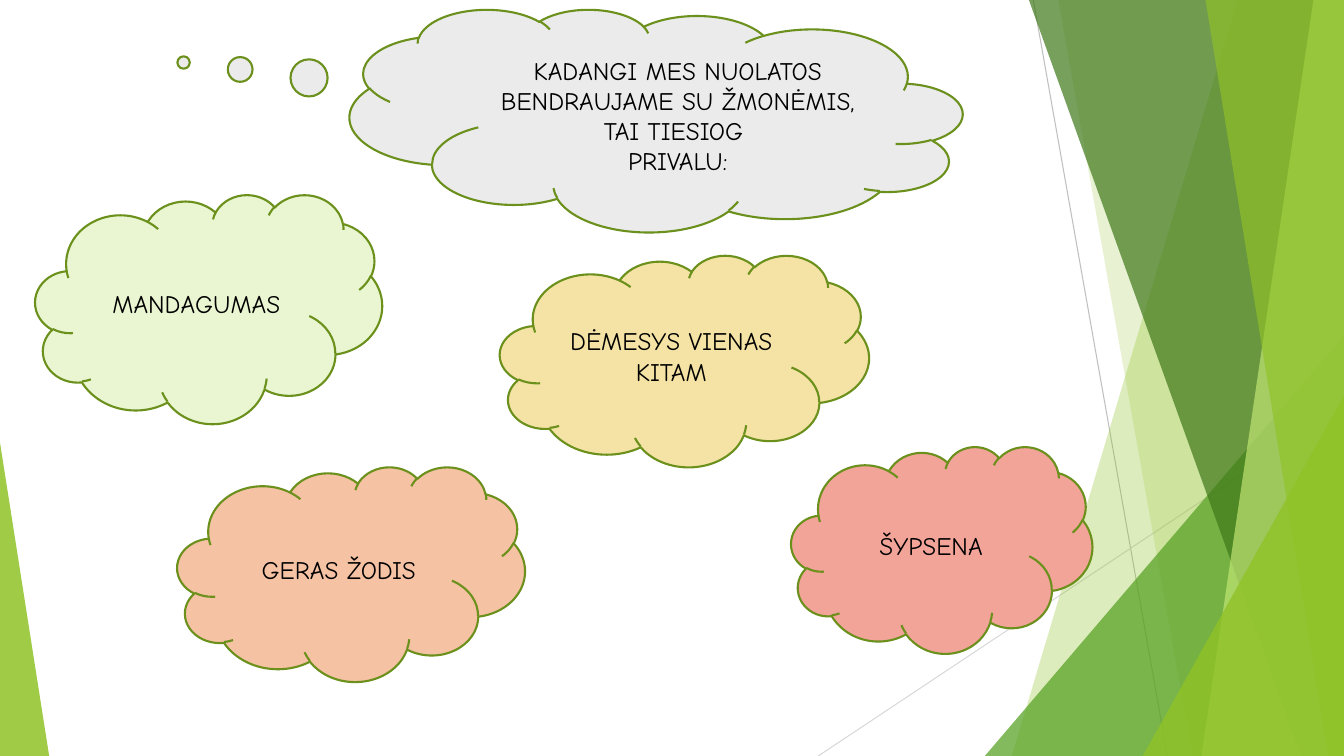
from dataclasses import dataclass

from lxml import etree
from pptx import Presentation
from pptx.dml.color import RGBColor
from pptx.enum import shapes, text
from pptx.oxml import ns
from pptx.util import Cm, Pt


@dataclass(frozen=True)
class Theme:
    font: str = "Comic Neue"
    text_size: float = 18
    outline_width: float = 1.5
    hairline_width: float = 0.75
    text: str = "000000"
    outline: str = "6B901C"
    hairline_dark: str = "BFBFBF"
    hairline_light: str = "D9D9D9"
    lime: str = "90C226"
    green: str = "54A021"
    forest: str = "3F7819"
    pale_lime: str = "C0E474"
    grey: str = "EBEBEB"
    mint: str = "EAF6D1"
    peach: str = "F5C2A3"
    sand: str = "F5E3A5"
    coral: str = "F2A499"


@dataclass(frozen=True)
class Box:
    """A region of the slide in centimetres."""
    left: float
    top: float
    width: float
    height: float

    def lengths(self):
        return Cm(self.left), Cm(self.top), Cm(self.width), Cm(self.height)


THEME = Theme()
SLIDE = Box(0, 0, 33.87, 19.05)


def fill_glass(shape, color, opacity):
    """Fill a shape with a see-through colour and no outline."""
    shape.shadow.inherit = False
    shape.fill.solid()
    shape.fill.fore_color.rgb = RGBColor.from_string(color)
    shape.line.fill.background()
    color_element = shape._element.spPr.find(".//" + ns.qn("a:srgbClr"))
    etree.SubElement(color_element, ns.qn("a:alpha"), val=str(opacity * 1000))


def add_hairline(slide, start, end, color):
    connector = slide.shapes.add_connector(
        shapes.MSO_CONNECTOR.STRAIGHT, *map(Cm, start + end))
    connector.line.color.rgb = RGBColor.from_string(color)
    connector.line.width = Pt(THEME.hairline_width)
    etree.SubElement(connector._element.spPr, ns.qn("a:effectLst"))


def add_triangle(slide, box, apex, color, opacity):
    """Triangle whose apex sits at a share of the width."""
    triangle = slide.shapes.add_shape(
        shapes.MSO_SHAPE.ISOSCELES_TRIANGLE, *box.lengths())
    triangle.adjustments[0] = apex
    fill_glass(triangle, color, opacity)


def add_band(slide, box, top_x, bottom_x, color, opacity):
    """Full-height band from a slanted edge to the right side of the box."""
    right, bottom = box.left + box.width, box.top + box.height
    corners = [(right, box.top), (right, bottom), (box.left + bottom_x, bottom)]
    builder = slide.shapes.build_freeform(Cm(box.left + top_x), Cm(box.top))
    builder.add_line_segments([(Cm(x), Cm(y)) for x, y in corners], close=True)
    fill_glass(builder.convert_to_shape(), color, opacity)


def add_corner(slide, box, x, y, color, opacity):
    """Triangle filling the lower right corner of the box."""
    corner = Box(box.left + x, box.top + y, box.width - x, box.height - y)
    add_triangle(slide, corner, 1, color, opacity)


def add_facets(slide, box):
    # Thin crossing lines
    bottom = box.top + box.height
    add_hairline(slide, (box.left + 5.42, box.top), (box.left + 8.8, bottom),
                 THEME.hairline_dark)
    add_hairline(slide, (box.left + box.width, box.top + 10.24),
                 (box.left, bottom), THEME.hairline_light)
    # Overlapping panes, back to front
    for add_pane, x, second, color, opacity in (
        (add_band, 10.57, 4.88, THEME.lime, 30),
        (add_band, 6.05, 9.43, THEME.lime, 20),
        (add_corner, 4.2, 8.46, THEME.green, 72),
        (add_band, 5.31, 12.17, THEME.forest, 70),
        (add_band, 12.48, 9.66, THEME.pale_lime, 70),
        (add_band, 9.76, 12.86, THEME.lime, 65),
        (add_corner, 8.18, 9.98, THEME.lime, 80),
    ):
        add_pane(slide, box, x, second, color, opacity)


def add_cloud(slide, box, lines, color, kind=shapes.MSO_SHAPE.CLOUD):
    cloud = slide.shapes.add_shape(kind, *box.lengths())
    cloud.shadow.inherit = False
    cloud.fill.solid()
    cloud.fill.fore_color.rgb = RGBColor.from_string(color)
    cloud.line.color.rgb = RGBColor.from_string(THEME.outline)
    cloud.line.width = Pt(THEME.outline_width)
    frame = cloud.text_frame
    frame.word_wrap = True
    frame.vertical_anchor = text.MSO_ANCHOR.MIDDLE
    frame.text = "\n".join(lines)
    for paragraph in frame.paragraphs:
        paragraph.alignment = text.PP_ALIGN.CENTER
        paragraph.font.name = THEME.font
        paragraph.font.size = Pt(THEME.text_size)
        paragraph.font.color.rgb = RGBColor.from_string(THEME.text)
    return cloud


def add_thought(slide, box, lines):
    """Mirrored thought cloud with its bubbles trailing to the left."""
    thought = add_cloud(slide, box, lines, THEME.grey,
                        shapes.MSO_SHAPE.CLOUD_CALLOUT)
    thought.adjustments[0] = 0.771
    thought.adjustments[1] = -0.26
    thought.rotation = 180
    thought._element.spPr.find(ns.qn("a:xfrm")).set("flipV", "1")


def main():
    presentation = Presentation()
    presentation.slide_width = Cm(SLIDE.width)
    presentation.slide_height = Cm(SLIDE.height)
    slide = presentation.slides.add_slide(presentation.slide_layouts[6])

    # Green backdrop on both sides
    add_facets(slide, Box(20.62, 0, 13.25, SLIDE.height))
    add_triangle(slide, Box(0, 11.15, 1.24, 7.9), 0, THEME.lime, 85)

    # Leading thought
    add_thought(slide, Box(8.81, 0.23, 15.44, 5.61), (
        "KADANGI MES NUOLATOS BENDRAUJAME SU ŽMONĖMIS, TAI TIESIOG ",
        "PRIVALU:"))

    # Clouds with the manners
    for box, label, color in (
        (Box(0.89, 4.9, 8.74, 5.77), "MANDAGUMAS", THEME.mint),
        (Box(4.47, 11.76, 8.76, 5.41), "GERAS ŽODIS", THEME.peach),
        (Box(12.6, 6.43, 9.3, 5.33), "DĖMESYS VIENAS KITAM", THEME.sand),
        (Box(19.94, 11.25, 7.59, 5.21), "ŠYPSENA", THEME.coral),
    ):
        add_cloud(slide, box, [label], color)

    presentation.save("out.pptx")


if __name__ == "__main__":
    main()
